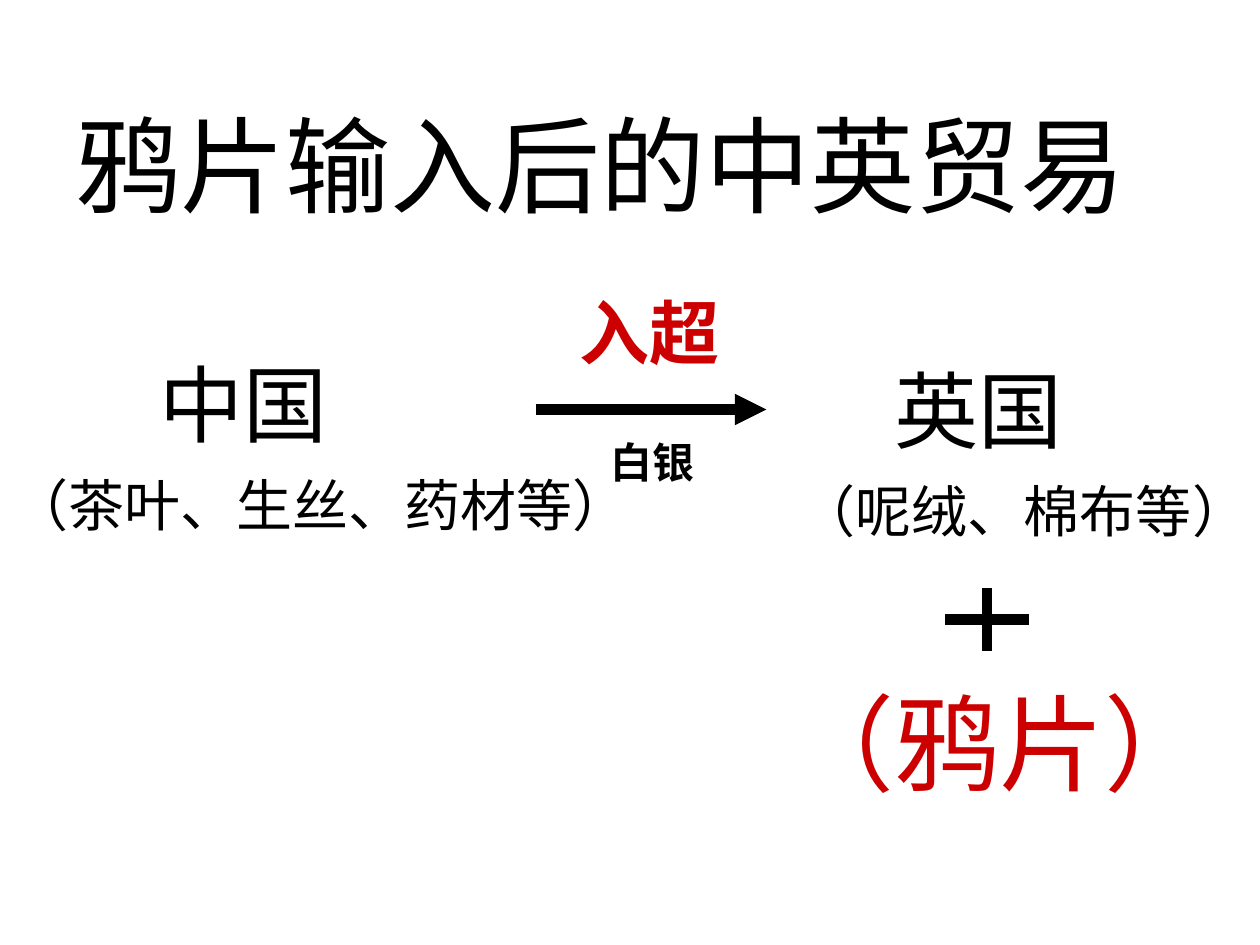
from pptx import Presentation
from pptx.dml.color import RGBColor
from pptx.enum import shapes, text
from pptx.oxml import ns, xmlchemy
from pptx.util import Pt

BLACK = "000000"
RED = "CC0000"


def colour(value):
    return RGBColor.from_string(value)


class TradeSlide:
    font = "Times New Roman"
    line_width = 6
    paragraph_gap = 9.5

    def __init__(self, slide):
        self.slide = slide

    def fill_text(self, holder, lines, hue, bold):
        frame = holder.text_frame
        frame.text = "\n".join(words for words, size, indent in lines)
        frame.word_wrap = True
        frame.auto_size = text.MSO_AUTO_SIZE.SHAPE_TO_FIT_TEXT
        frame.vertical_anchor = text.MSO_ANCHOR.TOP
        for index, (paragraph, (words, size, indent)) in enumerate(zip(frame.paragraphs, lines)):
            paragraph.alignment = text.PP_ALIGN.LEFT
            paragraph.space_before = Pt(self.paragraph_gap if index else 0)
            if indent:
                properties = paragraph._p.get_or_add_pPr()
                properties.set("marL", str(Pt(indent)))
                properties.set("indent", "0")
            for run in paragraph.runs:
                run.font.name = self.font
                run.font.size = Pt(size)
                run.font.bold = bold
                run.font.color.rgb = colour(hue)

    def title(self, box, words, size):
        heading = self.slide.shapes.title
        heading.left, heading.top, heading.width, heading.height = map(Pt, box)
        self.fill_text(heading, [(words, size, 0)], BLACK, False)

    def label(self, box, lines, hue=BLACK, bold=False, group=None):
        owner = group or self.slide
        self.fill_text(owner.shapes.add_textbox(*map(Pt, box)), lines, hue, bold)

    def line(self, start, end, group, arrow=False):
        stroke = group.shapes.add_connector(
            shapes.MSO_CONNECTOR.STRAIGHT, *map(Pt, (*start, *end)))
        stroke.line.width = Pt(self.line_width)
        stroke.line.color.rgb = colour(BLACK)
        properties = stroke._element.find(ns.qn("p:spPr"))
        if arrow:
            head = xmlchemy.OxmlElement("a:tailEnd")
            head.set("type", "triangle")
            properties.find(ns.qn("a:ln")).append(head)
        properties.append(xmlchemy.OxmlElement("a:effectLst"))

    def group(self):
        return self.slide.shapes.add_group_shape()


def main():
    deck = Presentation()
    deck.slide_width, deck.slide_height = Pt(720), Pt(540)
    trade = TradeSlide(deck.slides.add_slide(deck.slide_layouts[5]))

    trade.title((36, 54, 648, 79), "鸦片输入后的中英贸易", 60)
    trade.label((0, 198, 377, 122), [("中国", 48, 84), ("（茶叶、生丝、药材等）", 32, 0)])
    trade.label((450, 201.6, 290, 122), [("英国", 48, 54), ("（呢绒、棉布等）", 32, 0)])

    silver_flow = trade.group()
    trade.label((342, 246, 66, 36), [("白银", 24, 0)], bold=True, group=silver_flow)
    trade.label((324, 162, 132, 55), [("入超", 40, 0)], RED, True, silver_flow)
    trade.line((306, 234), (438, 234), silver_flow, arrow=True)

    plus = trade.group()
    trade.line((540, 354), (588, 354), plus)
    trade.line((564, 336), (564, 372), plus)
    trade.label((444, 384, 262, 79), [("（鸦片）", 60, 0)], RED)

    deck.save("out.pptx")


if __name__ == "__main__":
    main()
